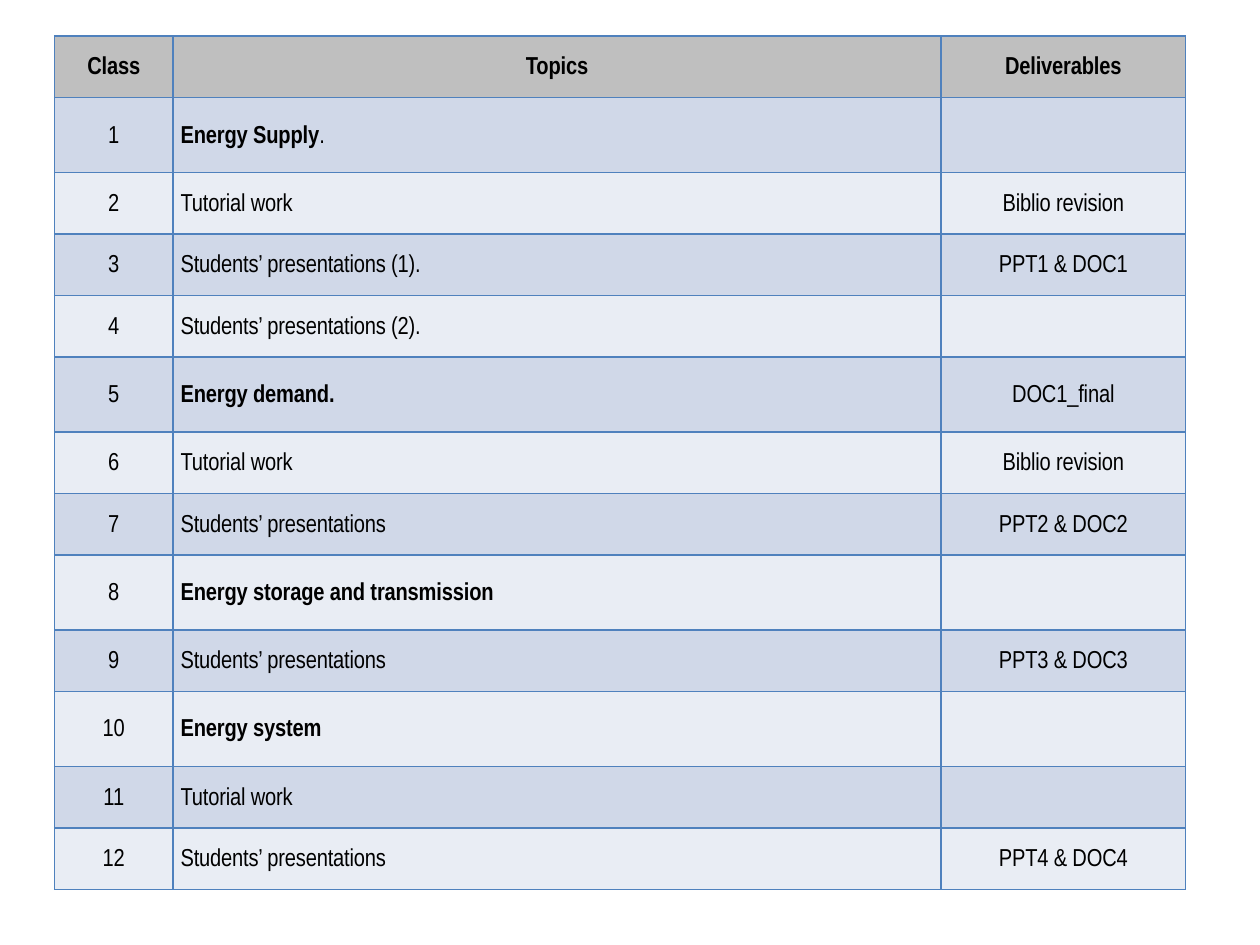
from dataclasses import dataclass

from lxml import etree
from pptx import Presentation
from pptx import util as u
from pptx.dml.color import RGBColor
from pptx.enum import text
from pptx.oxml import ns

BORDER_COLOUR = "4F81BD"
HEADER_FILL = "BFBFBF"
BAND_FILLS = ("D0D8E8", "E9EDF4")
COLUMN_WIDTHS = (2.39, 15.48, 4.93)
ROW_HEIGHT, TOPIC_HEIGHT = 1.24, 1.51
CELL_FORMAT = {
    "margin_left": u.Cm(0.15),
    "margin_right": u.Cm(0.15),
    "margin_top": 0,
    "margin_bottom": 0,
    "vertical_anchor": text.MSO_ANCHOR.MIDDLE,
}
FONT_FORMAT = {"name": "Arial Narrow", "size": u.Pt(14)}


@dataclass
class ClassSession:
    topic: str
    deliverable: str = ""
    is_theme: bool = False
    ending: str = ""  # closing mark set in regular weight


SESSIONS = [
    ClassSession("Energy Supply", is_theme=True, ending="."),
    ClassSession("Tutorial work", "Biblio revision"),
    ClassSession("Students’ presentations (1).", "PPT1 & DOC1"),
    ClassSession("Students’ presentations (2)."),
    ClassSession("Energy demand.", "DOC1_final", is_theme=True),
    ClassSession("Tutorial work", "Biblio revision"),
    ClassSession("Students’ presentations", "PPT2 & DOC2"),
    ClassSession("Energy storage and transmission", is_theme=True),
    ClassSession("Students’ presentations", "PPT3 & DOC3"),
    ClassSession("Energy system", is_theme=True),
    ClassSession("Tutorial work"),
    ClassSession("Students’ presentations", "PPT4 & DOC4"),
]


def colour(value: str) -> RGBColor:
    return RGBColor.from_string(value)


def apply_format(target, values: dict) -> None:
    for name, value in values.items():
        setattr(target, name, value)


def add_borders(cell) -> None:
    """Outline the cell; call before filling, as lines precede the fill in the XML."""
    properties = cell._tc.get_or_add_tcPr()
    for side in ("lnL", "lnR", "lnT", "lnB"):
        line = etree.SubElement(properties, ns.qn(f"a:{side}"), w=str(u.Pt(1)))
        fill = etree.SubElement(line, ns.qn("a:solidFill"))
        etree.SubElement(fill, ns.qn("a:srgbClr"), val=BORDER_COLOUR)


def add_span(para, words: str, bold: bool) -> None:
    span = para.add_run()
    span.text = words
    apply_format(span.font, {**FONT_FORMAT, "bold": bold})
    span.font.color.rgb = colour("000000")
    span._r.get_or_add_rPr().set("spc", "-10")


def fill_cell(cell, words: str, fill: str, bold: bool = False,
              centred: bool = True, ending: str = "") -> None:
    add_borders(cell)
    cell.fill.solid()
    cell.fill.fore_color.rgb = colour(fill)
    apply_format(cell, CELL_FORMAT)
    para = cell.text_frame.paragraphs[0]
    para.line_spacing = u.Pt(15)
    para.alignment = text.PP_ALIGN.CENTER if centred else text.PP_ALIGN.LEFT
    if words:
        add_span(para, words, bold)
    if ending:
        add_span(para, ending, False)


def add_schedule(page) -> None:
    heights = [ROW_HEIGHT] + [
        TOPIC_HEIGHT if session.is_theme else ROW_HEIGHT for session in SESSIONS
    ]
    frame = page.shapes.add_table(
        len(heights), len(COLUMN_WIDTHS), u.Cm(1.1), u.Cm(0.73),
        u.Cm(sum(COLUMN_WIDTHS)), u.Cm(sum(heights)))
    table = frame.table
    for column, width in zip(table.columns, COLUMN_WIDTHS):
        column.width = u.Cm(width)
    for row, height in zip(table.rows, heights):
        row.height = u.Cm(height)

    for index, heading in enumerate(("Class", "Topics", "Deliverables")):
        fill_cell(table.cell(0, index), heading, HEADER_FILL, bold=True)
    for number, session in enumerate(SESSIONS, start=1):
        fill = BAND_FILLS[(number - 1) % 2]
        fill_cell(table.cell(number, 0), str(number), fill)
        fill_cell(table.cell(number, 1), session.topic, fill,
                  bold=session.is_theme, centred=False, ending=session.ending)
        fill_cell(table.cell(number, 2), session.deliverable, fill)


def main() -> None:
    deck = Presentation()
    deck.slide_width, deck.slide_height = u.Cm(25.4), u.Cm(19.05)
    page = deck.slides.add_slide(deck.slide_layouts.get_by_name("Blank"))
    add_schedule(page)
    deck.save("out.pptx")


if __name__ == "__main__":
    main()
